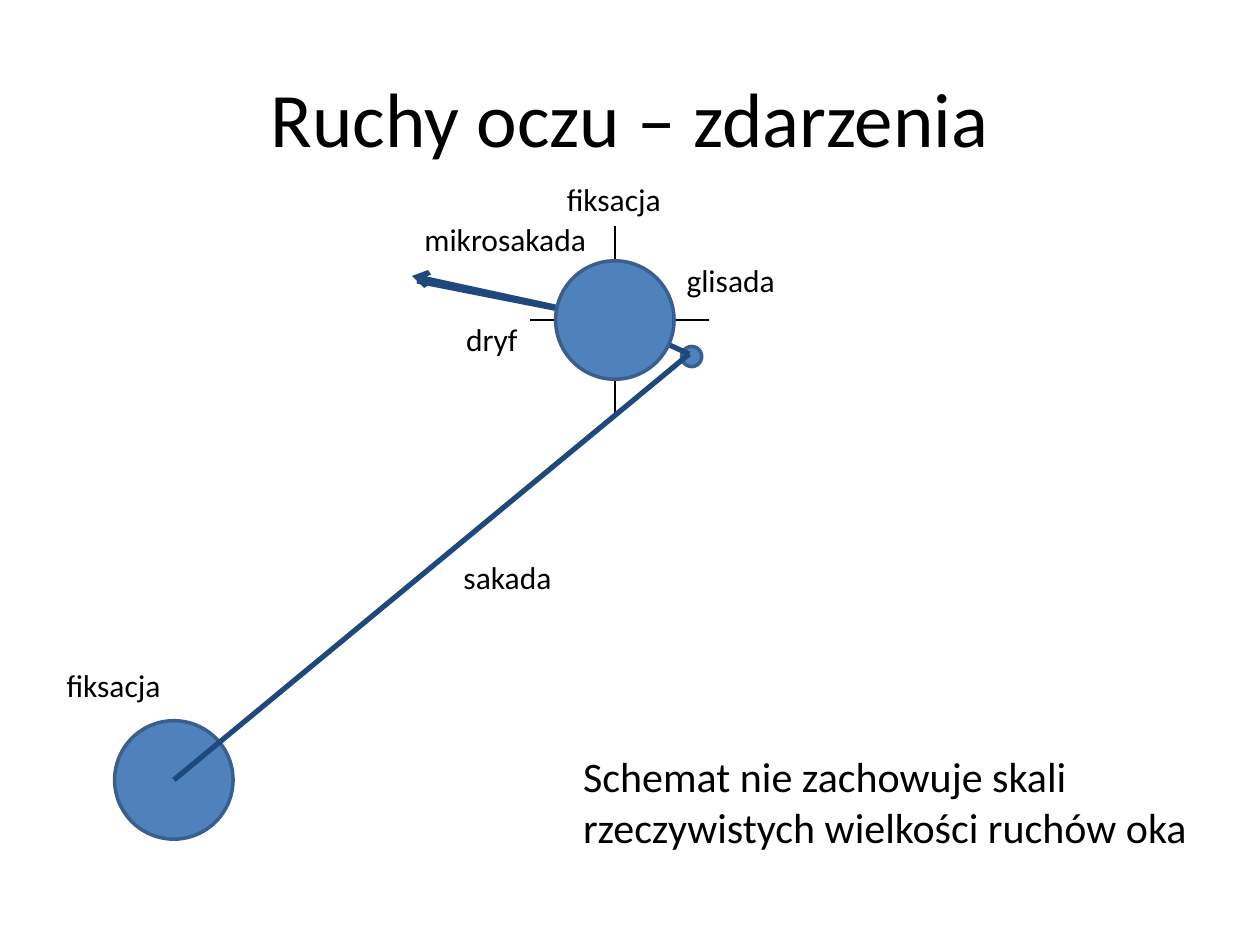
from lxml.etree import SubElement
from pptx import Presentation
from pptx.dml.color import RGBColor
from pptx.enum.shapes import MSO_CONNECTOR as Conn, MSO_SHAPE as Shape
from pptx.enum.text import MSO_ANCHOR as Anchor, MSO_AUTO_SIZE as Fit, PP_ALIGN as Align
from pptx.oxml.ns import qn
from pptx.util import Inches, Pt

COLORS = {"text": "000000", "fill": "4F81BD", "edge": "3A5F8C", "move": "1F497D"}
FONT = "Calibri"

# Key points of the eye path
START = (1.38, 6.19)
GOAL = (4.88, 2.54)
LAND = (5.47, 2.81)

LABELS = [
    ("fiksacja", 0.43, 5.24, 0.96),
    ("sakada", 3.58, 4.38, 0.91),
    ("glisada", 5.35, 2.02, 0.91),
    ("fiksacja", 4.4, 1.38, 0.96),
    ("dryf", 3.6, 2.49, 0.62),
    ("mikrosakada", 3.27, 1.7, 1.5),
]


def color(name):
    return RGBColor.from_string(COLORS[name])


def add_run(para, text, size):
    run = para.add_run()
    run.text = text
    run.font.name = FONT
    run.font.size = Pt(size)
    run.font.color.rgb = color("text")


def add_title(slide, text):
    title = slide.shapes.title
    title.left, title.top = Inches(0.5), Inches(0.3)
    title.width, title.height = Inches(9), Inches(1.25)
    title.text_frame.vertical_anchor = Anchor.MIDDLE
    para = title.text_frame.paragraphs[0]
    para.alignment = Align.CENTER
    add_run(para, text, 44)


def add_label(slide, lines, left, top, width, height=0.4, size=18):
    box = slide.shapes.add_textbox(Inches(left), Inches(top), Inches(width), Inches(height))
    frame = box.text_frame
    frame.word_wrap = False
    frame.auto_size = Fit.SHAPE_TO_FIT_TEXT
    para = frame.paragraphs[0]
    para.alignment = Align.LEFT
    for i, line in enumerate(lines):
        if i:
            para.add_line_break()
        add_run(para, line, size)


def add_dot(slide, center, size):
    x, y = center
    dot = slide.shapes.add_shape(
        Shape.OVAL, Inches(x - size / 2), Inches(y - size / 2), Inches(size), Inches(size))
    dot.shadow.inherit = False
    dot.fill.solid()
    dot.fill.fore_color.rgb = color("fill")
    dot.line.color.rgb = color("edge")
    dot.line.width = Pt(2)


def add_line(shapes, start, end, name="move", width=3, arrow=False):
    line = shapes.add_connector(Conn.STRAIGHT, *(Inches(v) for v in start + end))
    line.line.color.rgb = color(name)
    line.line.width = Pt(width)
    props = line._element.spPr
    if arrow:
        SubElement(props.find(qn("a:ln")), qn("a:tailEnd"), type="arrow")
    SubElement(props, qn("a:effectLst"))


def add_cross(slide):
    group = slide.shapes.add_group_shape()
    x, y = GOAL
    add_line(group.shapes, (x, 1.79), (x, 3.28), "text", 0.75)
    add_line(group.shapes, (4.21, y), (5.63, y), "text", 0.75)


def main():
    deck = Presentation()
    deck.slide_width, deck.slide_height = Inches(10), Inches(7.5)
    slide = deck.slides.add_slide(deck.slide_layouts[5])
    add_title(slide, "Ruchy oczu – zdarzenia")

    # First fixation, target cross and landing point
    add_dot(slide, START, 0.94)
    add_cross(slide)
    add_dot(slide, (5.49, 2.83), 0.16)

    # Glissade, saccade, then microsaccade out and back
    add_line(slide.shapes, GOAL, LAND)
    add_line(slide.shapes, START, LAND)
    add_line(slide.shapes, GOAL, (3.27, 2.19), arrow=True)
    add_line(slide.shapes, (3.31, 2.23), GOAL, arrow=True)

    # Second fixation
    add_dot(slide, GOAL, 0.94)

    # Note and labels
    note = ["Schemat nie zachowuje skali ", "rzeczywistych wielkości ruchów oka"]
    add_label(slide, note, 4.53, 5.91, 5.04, 0.91, 24)
    for text, left, top, width in LABELS:
        add_label(slide, [text], left, top, width)

    deck.save("out.pptx")


if __name__ == "__main__":
    main()
